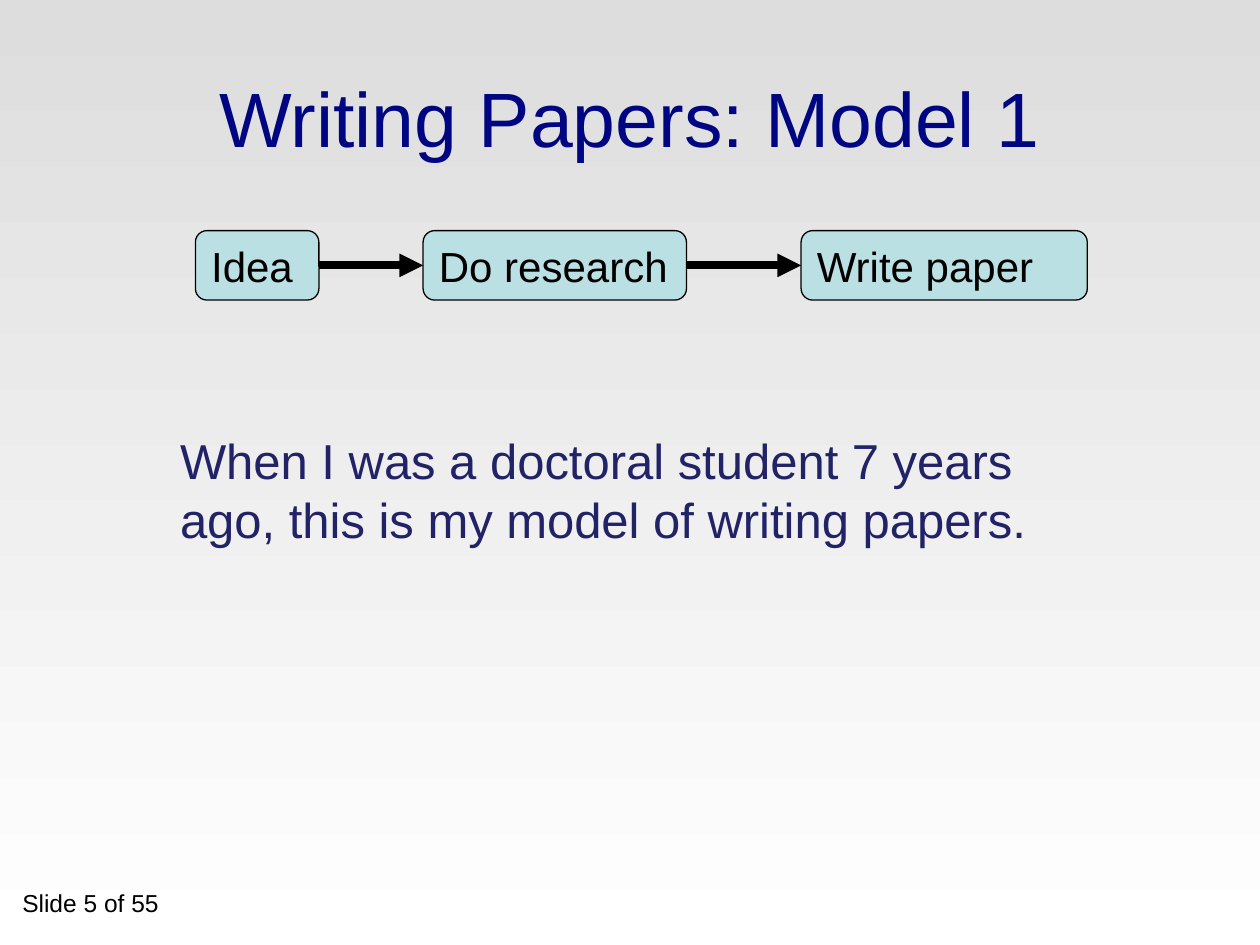
"""Build the slide about the first model of writing papers."""

from dataclasses import dataclass
from itertools import pairwise

from lxml.etree import SubElement
from pptx import Presentation
from pptx.dml.color import RGBColor
from pptx.enum.shapes import MSO_CONNECTOR, MSO_SHAPE
from pptx.enum.text import MSO_ANCHOR, PP_ALIGN
from pptx.oxml.ns import qn
from pptx.shapes.autoshape import Shape
from pptx.slide import Slide
from pptx.text.text import TextFrame
from pptx.util import Cm, Pt

BLACK = "000000"
STEP_TOP, STEP_HEIGHT = 4.65, 1.4
LEFT_SITE, RIGHT_SITE = 1, 3


@dataclass(frozen=True)
class Step:
    label: str
    left: float
    width: float


@dataclass(frozen=True)
class Note:
    text: str
    left: float
    top: float
    width: float
    height: float
    size: int
    color: str


STEPS = [
    Step("Idea", 3.94, 2.49),
    Step("Do research", 8.53, 5.31),
    Step("Write paper", 16.15, 5.77),
]
NOTES = [
    Note("Slide 5 of 55", 0.2, 17.78, 3.81, 0.86, 14, BLACK),
    Note(
        "When I was a doctoral student 7 years ago, this is my model of writing papers.",
        3.38, 8.56, 18.85, 2.64, 28, "222267",
    ),
]


def color_of(value: str) -> RGBColor:
    return RGBColor.from_string(value)


def write(frame: TextFrame, text: str, size: int, color: str,
          alignment: PP_ALIGN = PP_ALIGN.LEFT) -> None:
    frame.word_wrap = True
    paragraph = frame.paragraphs[0]
    paragraph.alignment = alignment
    run = paragraph.add_run()
    run.text = text
    run.font.name = "Arial"
    run.font.size = Pt(size)
    run.font.color.rgb = color_of(color)


def paint_background(slide: Slide) -> None:
    fill = slide.background.fill
    fill.gradient()
    fill.gradient_angle = 270
    for stop, color in zip(fill.gradient_stops, ("DDDDDD", "FFFFFF")):
        stop.color.rgb = color_of(color)


def draw_title(slide: Slide, text: str) -> None:
    title = slide.shapes.title
    title.left, title.top = Cm(1.27), Cm(0.76)
    title.width, title.height = Cm(22.86), Cm(3.18)
    title.text_frame.vertical_anchor = MSO_ANCHOR.MIDDLE
    write(title.text_frame, text, 44, "000681", PP_ALIGN.CENTER)


def draw_step(slide: Slide, step: Step) -> Shape:
    shape = slide.shapes.add_shape(
        MSO_SHAPE.ROUNDED_RECTANGLE,
        Cm(step.left), Cm(STEP_TOP), Cm(step.width), Cm(STEP_HEIGHT),
    )
    shape.shadow.inherit = False
    shape.fill.solid()
    shape.fill.fore_color.rgb = color_of("BBE0E3")
    shape.line.color.rgb = color_of(BLACK)
    shape.line.width = Pt(0.75)
    shape.text_frame.vertical_anchor = MSO_ANCHOR.MIDDLE
    write(shape.text_frame, step.label, 24, BLACK)
    return shape


def draw_arrow(slide: Slide, source: Shape, target: Shape) -> None:
    connector = slide.shapes.add_connector(MSO_CONNECTOR.STRAIGHT, 0, 0, 0, 0)
    connector.begin_connect(source, RIGHT_SITE)
    connector.end_connect(target, LEFT_SITE)
    connector.line.color.rgb = color_of(BLACK)
    connector.line.width = Pt(4.5)
    properties = connector._element.spPr
    SubElement(properties.find(qn("a:ln")), qn("a:tailEnd"), type="triangle")
    SubElement(properties, qn("a:effectLst"))


def draw_note(slide: Slide, note: Note) -> None:
    box = slide.shapes.add_textbox(
        Cm(note.left), Cm(note.top), Cm(note.width), Cm(note.height)
    )
    write(box.text_frame, note.text, note.size, note.color)


def main() -> None:
    presentation = Presentation()
    presentation.slide_width, presentation.slide_height = Cm(25.4), Cm(19.05)
    slide = presentation.slides.add_slide(
        presentation.slide_layouts.get_by_name("Title Only")
    )
    paint_background(slide)
    draw_title(slide, "Writing Papers: Model 1")
    shapes = [draw_step(slide, step) for step in STEPS]
    for source, target in pairwise(shapes):
        draw_arrow(slide, source, target)
    for note in NOTES:
        draw_note(slide, note)
    presentation.save("out.pptx")


if __name__ == "__main__":
    main()
